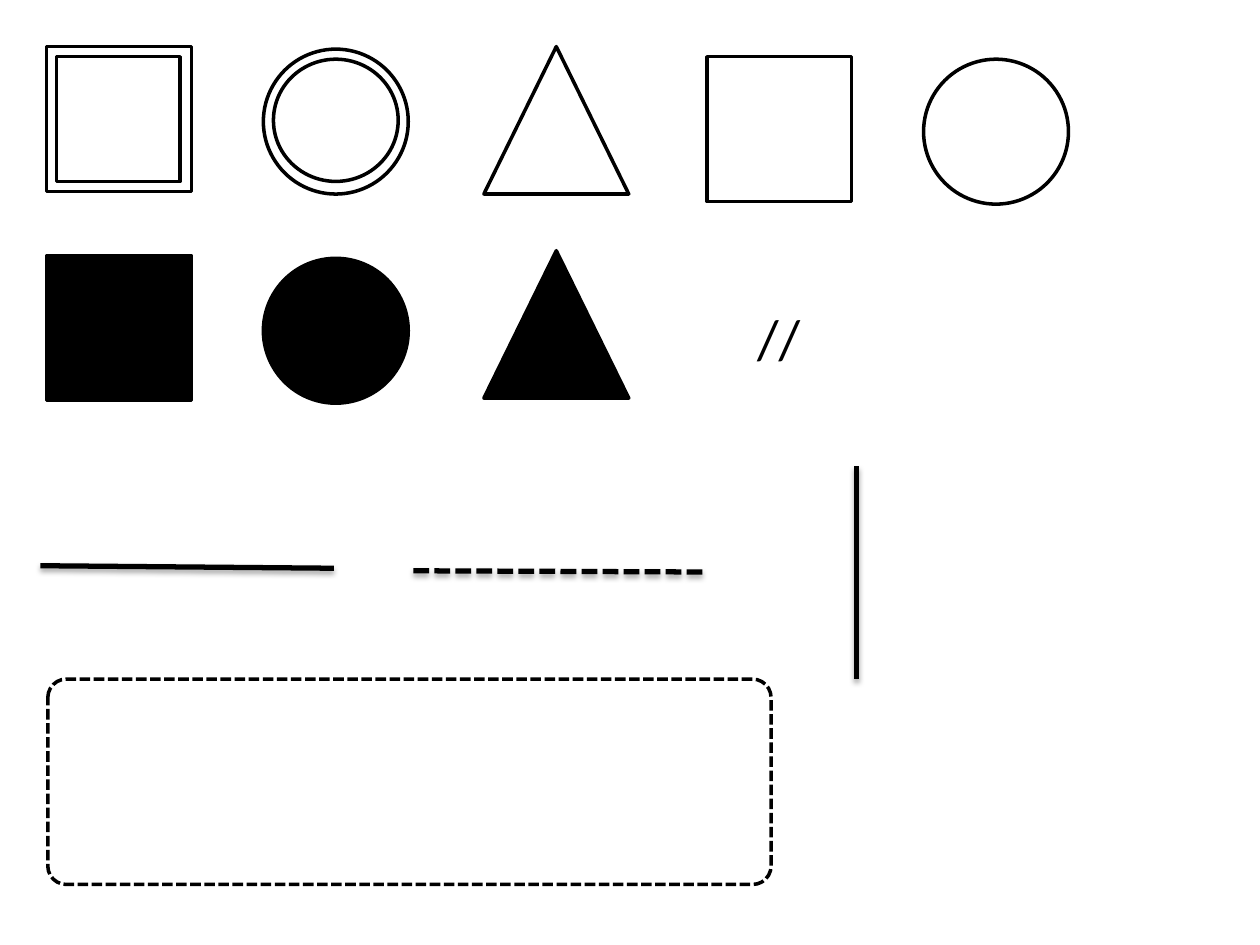
from dataclasses import dataclass
from typing import NamedTuple

from lxml.etree import SubElement
from pptx import Presentation
from pptx.dml.color import RGBColor
from pptx.enum.dml import MSO_LINE as Dash
from pptx.enum.shapes import MSO_CONNECTOR as Link, MSO_SHAPE as Kind
from pptx.enum.text import MSO_AUTO_SIZE as Fit
from pptx.oxml.ns import qn
from pptx.util import Inches, Pt


@dataclass(frozen=True)
class Theme:
    ink: RGBColor = RGBColor(0, 0, 0)
    paper: RGBColor = RGBColor(255, 255, 255)
    font: str = "Calibri"
    size: Pt = Pt(32)
    thin: Pt = Pt(2)
    thick: Pt = Pt(3)


THEME = Theme()


class Mark(NamedTuple):
    kind: Kind
    left: float
    top: float
    wide: float = 1.15
    high: float = 1.15
    fill: RGBColor | None = THEME.paper
    dashed: bool = False
    round: float | None = None


class Rule(NamedTuple):
    start: tuple[float, float]
    end: tuple[float, float]
    dashed: bool = False


# Columns shared by the outlined and solid symbols
SQUARE, CIRCLE, PEAK = 0.37, 2.09, 3.84

MARKS = [
    # Double outlines, outer before inner
    Mark(Kind.RECTANGLE, SQUARE, 0.37),
    Mark(Kind.RECTANGLE, 0.45, 0.45, 0.98, 0.99),
    Mark(Kind.OVAL, CIRCLE, 0.39),
    Mark(Kind.OVAL, 2.17, 0.47, 0.99, 0.97),
    # Single outlines
    Mark(Kind.ISOSCELES_TRIANGLE, PEAK, 0.37, high=1.17),
    Mark(Kind.RECTANGLE, 5.61, 0.45),
    Mark(Kind.OVAL, 7.33, 0.47),
    # Solid symbols
    Mark(Kind.RECTANGLE, SQUARE, 2.03, fill=THEME.ink),
    Mark(Kind.OVAL, CIRCLE, 2.05, fill=THEME.ink),
    Mark(Kind.ISOSCELES_TRIANGLE, PEAK, 1.99, high=1.17, fill=THEME.ink),
    # Dashed frame
    Mark(Kind.ROUNDED_RECTANGLE, 0.38, 5.39, 5.74, 1.63,
         fill=None, dashed=True, round=0.09),
]

RULES = [
    Rule((0.32, 4.49), (2.65, 4.51)),
    Rule((3.28, 4.53), (5.61, 4.54), dashed=True),
    Rule((6.8, 3.7), (6.8, 5.39)),
]


def style_line(line, width: Pt, dashed: bool) -> None:
    line.color.rgb = THEME.ink
    line.width = width
    if dashed:
        line.dash_style = Dash.SQUARE_DOT


def draw_mark(shapes, mark: Mark) -> None:
    box = map(Inches, (mark.left, mark.top, mark.wide, mark.high))
    shape = shapes.add_shape(mark.kind, *box)
    shape.shadow.inherit = False
    if mark.round is not None:
        shape.adjustments[0] = mark.round
    if mark.fill is None:
        shape.fill.background()
    else:
        shape.fill.solid()
        shape.fill.fore_color.rgb = mark.fill
    style_line(shape.line, THEME.thin, mark.dashed)


def add_shadow(link) -> None:
    effects = SubElement(link._element.spPr, qn("a:effectLst"))
    shadow = SubElement(effects, qn("a:outerShdw"), blurRad=str(Pt(3.1)),
                        dist=str(Pt(1.8)), dir="5400000", rotWithShape="0")
    color = SubElement(shadow, qn("a:srgbClr"), val=str(THEME.ink))
    SubElement(color, qn("a:alpha"), val="35000")


def draw_rule(shapes, rule: Rule) -> None:
    ends = map(Inches, (*rule.start, *rule.end))
    link = shapes.add_connector(Link.STRAIGHT, *ends)
    style_line(link.line, THEME.thick, rule.dashed)
    add_shadow(link)


def draw_text(shapes, text: str, *box: float) -> None:
    frame = shapes.add_textbox(*map(Inches, box)).text_frame
    frame.word_wrap = False
    frame.auto_size = Fit.SHAPE_TO_FIT_TEXT
    para = frame.paragraphs[0]
    para.text = text
    para.font.name = THEME.font
    para.font.size = THEME.size
    para.font.color.rgb = THEME.ink


def main() -> None:
    deck = Presentation()
    deck.slide_width, deck.slide_height = Inches(10), Inches(7.5)
    shapes = deck.slides.add_slide(deck.slide_layouts[6]).shapes
    for mark in MARKS:
        draw_mark(shapes, mark)
    for rule in RULES:
        draw_rule(shapes, rule)
    draw_text(shapes, "//", 5.91, 2.36, 0.55, 0.64)
    deck.save("out.pptx")


if __name__ == "__main__":
    main()
